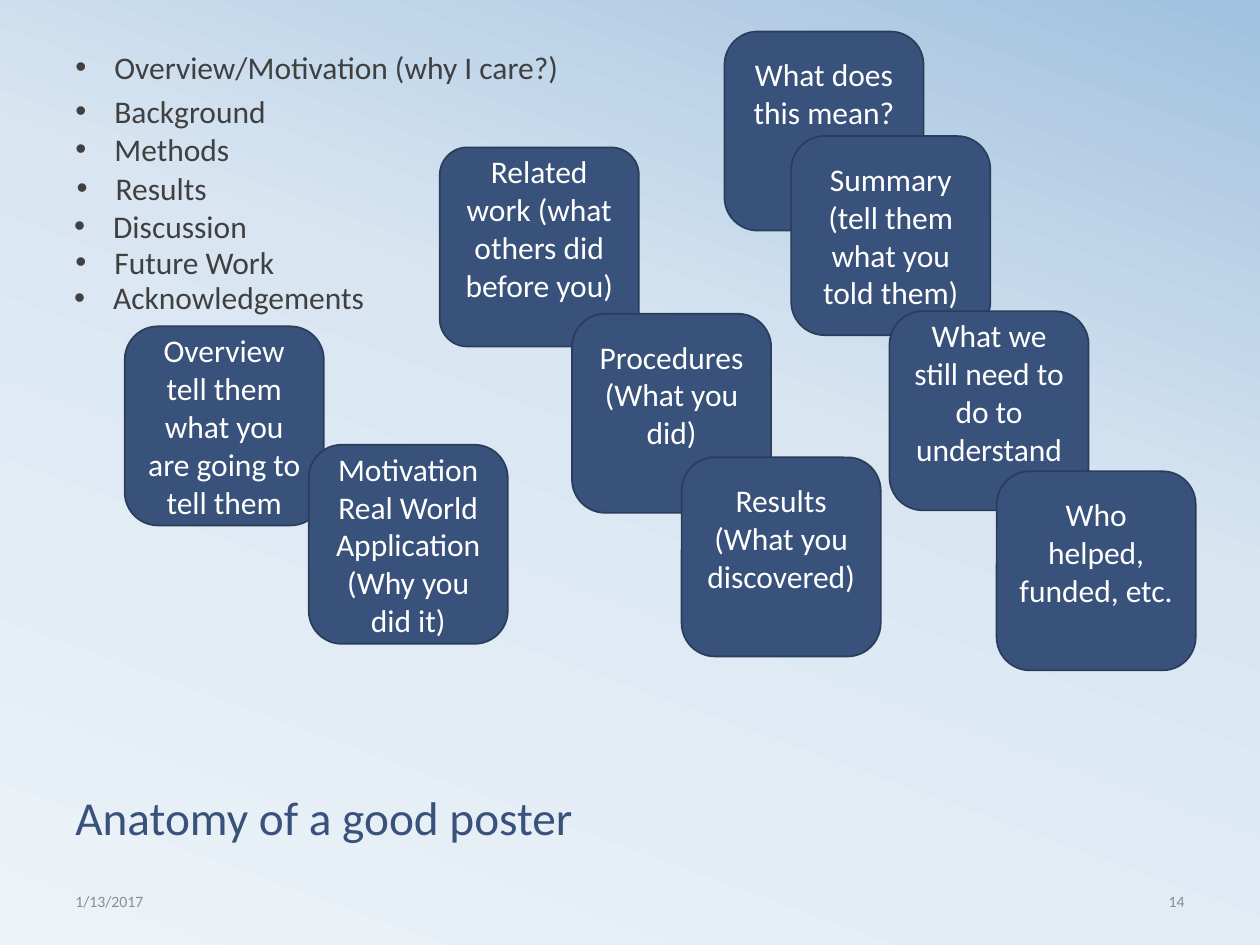
import copy

import pptx
import pptx.dml.color
import pptx.enum.shapes
import pptx.enum.text
import pptx.oxml
import pptx.oxml.ns
import pptx.util

Inches = pptx.util.Inches
ALIGN = pptx.enum.text.PP_ALIGN
ANCHOR = pptx.enum.text.MSO_ANCHOR

# Content
TITLE = "Anatomy of a good poster"
DATE, NUMBER = "1/13/2017", "14"
SECTIONS = [  # text, left, top
    ("Overview/Motivation (why I care?)", 0, 0.33),
    ("Background", 0, 0.68),
    ("Methods", 0, 0.98),
    ("Results", 0.01, 1.29),
    ("Discussion", -0.01, 1.59),
    ("Future Work", 0, 1.88),
    ("Acknowledgements", -0.01, 2.16),
]
CARDS = [  # paragraphs, left, top, lines kept free below the text
    (["Overview", "tell them what you are going to tell them"], 0.99, 2.59, 0),
    (["Motivation", "Real World Application", "(Why you did it)"], 2.45, 3.53, 0),
    (["Related work (what others did before you)"], 3.49, 1.17, 1),
    (["Procedures", "(What you did)"], 4.54, 2.49, 1),
    (["What does this mean?"], 5.75, 0.25, 2),
    (["Results (What you discovered)"], 5.41, 3.63, 1),
    (["Summary", "(tell them what you told them)"], 6.28, 1.08, 0),
    (["What we still need to do to understand"], 7.06, 2.47, 1),
    (["Who helped, funded, etc."], 7.91, 3.74, 1),
]

# Formats
COLORS = {"navy": "39527B", "edge": "2A3D5B", "white": "FFFFFF",
          "body": "404040", "muted": "8C8C8C"}
BACKGROUND = [(0, "ECF3F8"), (0.58, "D9E6F2"), (1, "A1C1DE")]
FONTS = {"title": (27, "navy"), "small": (9, "muted"),
         "section": (18, "body"), "card": (18, "white")}
CARD_SIZE = 1.58
LINE_HEIGHT = 0.3
CORNERS = {"Related work (what others did before you)": 0.138}


def rgb(value):
    return pptx.dml.color.RGBColor.from_string(value)


def write(shape, texts, style, align=ALIGN.LEFT, anchor=ANCHOR.TOP,
          bullet=False, line_spacing=None):
    frame = shape.text_frame
    frame.word_wrap = True
    frame.vertical_anchor = anchor
    size, color = FONTS[style]
    for index, text in enumerate(texts):
        paragraph = frame.add_paragraph() if index else frame.paragraphs[0]
        paragraph.add_run().text = text
        if bullet:
            add_bullet(paragraph)
        paragraph.alignment = align
        if line_spacing:
            paragraph.line_spacing = line_spacing
        font_format = {"name": "Calibri", "size": pptx.util.Pt(size)}
        for name, value in font_format.items():
            setattr(paragraph.runs[0].font, name, value)
        paragraph.runs[0].font.color.rgb = rgb(COLORS[color])


def add_bullet(paragraph):
    paragraph.level = 1
    properties = paragraph._p.get_or_add_pPr()
    properties.set("marL", str(Inches(0.81)))
    properties.set("indent", str(Inches(-0.31)))
    for tag, name, value in (("buFont", "typeface", "Arial"), ("buChar", "char", "•")):
        element = pptx.oxml.parse_xml(
            f'<a:{tag} {pptx.oxml.ns.nsdecls("a")} {name}="{value}"/>')
        properties.append(element)


def add_text(slide, box, text, style, **options):
    shape = slide.shapes.add_textbox(*map(Inches, box))
    write(shape, [text], style, **options)


def add_card(slide, texts, left, top, free_lines):
    shape = slide.shapes.add_shape(
        pptx.enum.shapes.MSO_SHAPE.ROUNDED_RECTANGLE,
        *map(Inches, (left, top, CARD_SIZE, CARD_SIZE)))
    shape.shadow.inherit = False
    shape.adjustments[0] = CORNERS.get(texts[0], 0.1667)
    shape.fill.solid()
    shape.fill.fore_color.rgb = rgb(COLORS["navy"])
    shape.line.color.rgb = rgb(COLORS["edge"])
    shape.line.width = pptx.util.Pt(1)
    shape.text_frame.margin_bottom = Inches(0.05 + free_lines * LINE_HEIGHT)
    write(shape, texts, "card", align=ALIGN.CENTER, anchor=ANCHOR.MIDDLE)


def paint_background(slide):
    fill = slide.background.fill
    fill.gradient()
    fill.gradient_angle = 70
    stop_list = slide.element.xpath(".//p:bg//a:gsLst")[0]
    stop_list.append(copy.deepcopy(stop_list[-1]))
    for stop, (position, color) in zip(fill.gradient_stops, BACKGROUND):
        stop.position = position
        stop.color.rgb = rgb(color)


def main():
    presentation = pptx.Presentation()
    presentation.slide_width = Inches(10)
    presentation.slide_height = Inches(7.5)
    slide = presentation.slides.add_slide(presentation.slide_layouts[6])
    paint_background(slide)

    # Title and footer
    add_text(slide, (0.5, 5.58, 9, 1.17), TITLE, "title",
             anchor=ANCHOR.BOTTOM, line_spacing=0.8)
    add_text(slide, (0.5, 6.95, 2.33, 0.4), DATE, "small", anchor=ANCHOR.MIDDLE)
    add_text(slide, (7.17, 6.95, 2.33, 0.4), NUMBER, "small",
             align=ALIGN.RIGHT, anchor=ANCHOR.MIDDLE)

    # Poster sections and the cards that explain them
    for text, left, top in SECTIONS:
        add_text(slide, (left, top, 5, 0.4), text, "section", bullet=True)
    for card in CARDS:
        add_card(slide, *card)

    presentation.save("out.pptx")


if __name__ == "__main__":
    main()
